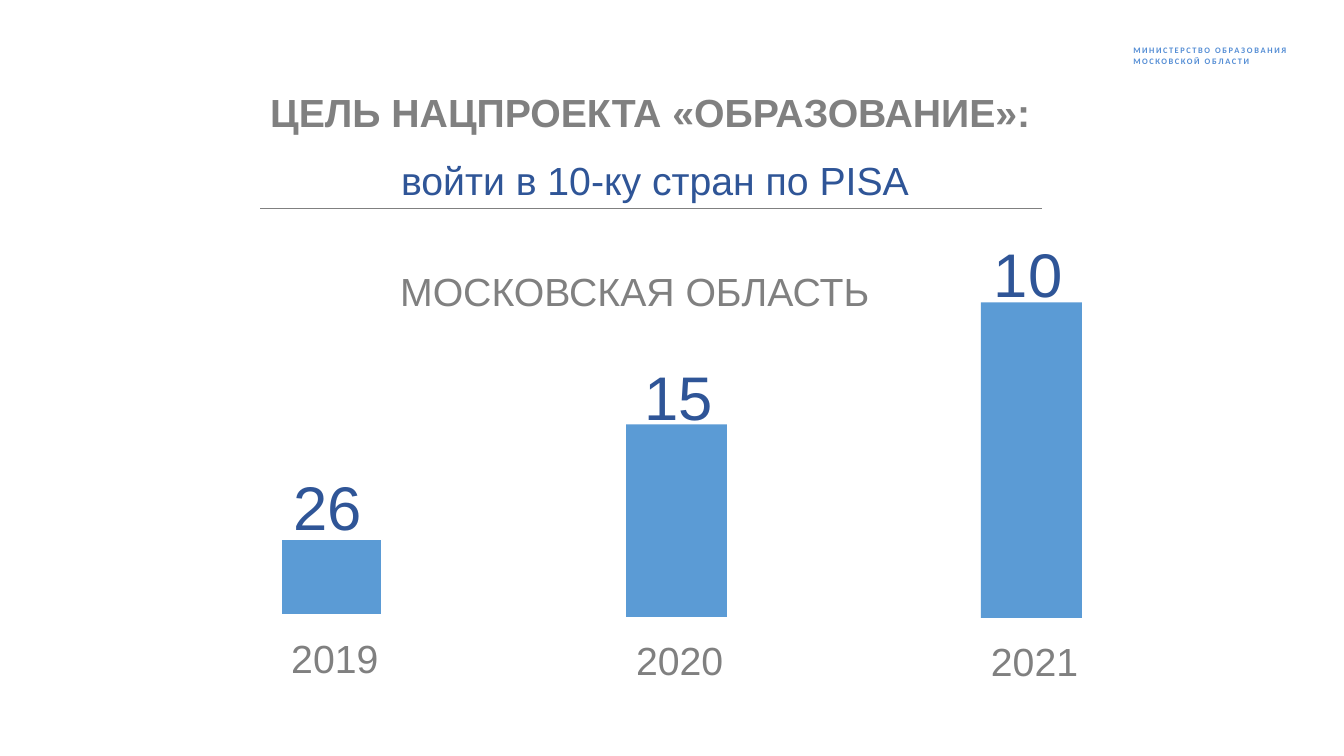
from lxml.etree import SubElement
from pptx import Presentation
from pptx.dml.color import RGBColor
from pptx.enum.shapes import MSO_CONNECTOR, MSO_SHAPE
from pptx.enum.text import MSO_ANCHOR, MSO_AUTO_SIZE, PP_ALIGN
from pptx.oxml.ns import qn
from pptx.util import Inches, Pt

COLORS = {
    "grey": "808080",
    "navy": "2F5597",
    "bar": "5B9BD5",
    "ministry": "558ED5",
    "white": "FFFFFF",
}

HEADING = {"name": "Arial", "size": Pt(28), "bold": True}
BODY = {"name": "Arial", "size": Pt(28), "bold": False}
RANK = {"name": "Arial", "size": Pt(44), "bold": False}
MINISTRY = {"name": "Calibri", "size": Pt(6), "bold": True}

FRAME = {
    "word_wrap": True,
    "auto_size": MSO_AUTO_SIZE.NONE,
    "vertical_anchor": MSO_ANCHOR.TOP,
    "margin_left": Inches(0.1),
    "margin_right": Inches(0.1),
    "margin_top": Inches(0.05),
    "margin_bottom": Inches(0.05),
}
MINISTRY_FRAME = {
    "margin_left": 0,
    "margin_right": 0,
    "margin_top": Inches(0.01),
    "margin_bottom": 0,
}

RANKS = [
    ("2019", "26", (2.79, 5.35, 1, 0.75), (0.02, -0.75)),
    ("2020", "15", (6.21, 4.21, 1, 1.91), (0.08, -0.7)),
    ("2021", "10", (9.73, 3, 1, 3.13), (0.03, -0.71)),
]


def rgb(color):
    return RGBColor.from_string(COLORS[color])


def apply_format(target, values):
    for name, value in values.items():
        setattr(target, name, value)


def add_run(paragraph, text, style, color):
    run = paragraph.add_run()
    run.text = text
    apply_format(run.font, style)
    run.font.color.rgb = rgb(color)
    return run


def write(holder, text, style, color, align=PP_ALIGN.LEFT):
    apply_format(holder.text_frame, FRAME)
    paragraph = holder.text_frame.paragraphs[0]
    paragraph.alignment = align
    add_run(paragraph, text, style, color)


def add_text(slide, box, *content):
    holder = slide.shapes.add_textbox(*map(Inches, box))
    write(holder, *content)


def add_ministry(slide, box):
    holder = slide.shapes.add_textbox(*map(Inches, box))
    apply_format(holder.text_frame, FRAME | MINISTRY_FRAME)
    paragraph = holder.text_frame.paragraphs[0]
    apply_format(paragraph, {"line_spacing": 1.11, "space_before": Pt(1)})
    paragraph._p.get_or_add_pPr().set("marL", str(Inches(0.01)))
    words = [("МИНИСТЕРСТВО ", 110), ("ОБРАЗОВАНИЯ ", 120), ("МОСКОВСКОЙ ", 110), ("ОБЛАСТИ", 120)]
    for word, tracking in words:
        run = add_run(paragraph, word, MINISTRY, "ministry")
        run._r.get_or_add_rPr().set("spc", str(tracking))


def add_goal(slide, box):
    left, top, width, height = box
    goal = slide.shapes.title
    edges = ("left", "top", "width", "height")
    apply_format(goal, dict(zip(edges, map(Inches, (left, top, width, 0.57)))))
    write(goal, "ЦЕЛЬ НАЦПРОЕКТА «ОБРАЗОВАНИЕ»:", HEADING, "grey")
    add_text(slide, (left + 1.3, top + 0.67, 5.58, 0.57),
             "войти в 10-ку стран по PISA", BODY, "navy")
    rule_ends = (left, top + height, left + 7.75, top + height)
    rule = slide.shapes.add_connector(MSO_CONNECTOR.STRAIGHT, *map(Inches, rule_ends))
    rule.line.width = Pt(1)
    rule.line.color.rgb = rgb("grey")
    SubElement(rule._element.spPr, qn("a:effectLst"))


def add_rank(slide, box, year, rank, rank_offset):
    left, top, width, height = box
    add_text(slide, (left, top + height + 0.14, 1.08, 0.57), year, BODY, "grey")
    bar = slide.shapes.add_shape(MSO_SHAPE.RECTANGLE, *map(Inches, box))
    bar.shadow.inherit = False
    bar.fill.solid()
    bar.fill.fore_color.rgb = rgb("bar")
    if year == "2019":
        bar.line.width = Pt(1)
        bar.line.color.rgb = rgb("white")
    else:
        bar.line.fill.background()
    shift_x, shift_y = rank_offset
    add_text(slide, (left + shift_x, top + shift_y, 1.06, 0.84), rank, RANK, "navy")


def add_region(slide, box):
    add_text(slide, box, "МОСКОВСКАЯ ОБЛАСТЬ", BODY, "grey", PP_ALIGN.CENTER)
    for year, rank, bar_box, rank_offset in RANKS:
        add_rank(slide, bar_box, year, rank, rank_offset)


def main():
    deck = Presentation()
    apply_format(deck, {"slide_width": Inches(13.33), "slide_height": Inches(7.5)})
    slide = deck.slides.add_slide(deck.slide_layouts[5])
    slide.background.fill.solid()
    slide.background.fill.fore_color.rgb = rgb("white")
    add_ministry(slide, (11.23, 0.43, 1.59, 0.24))
    add_goal(slide, (2.58, 0.83, 7.83, 1.24))
    add_region(slide, (3.42, 2.6, 5.75, 0.57))
    deck.save("out.pptx")


if __name__ == "__main__":
    main()
